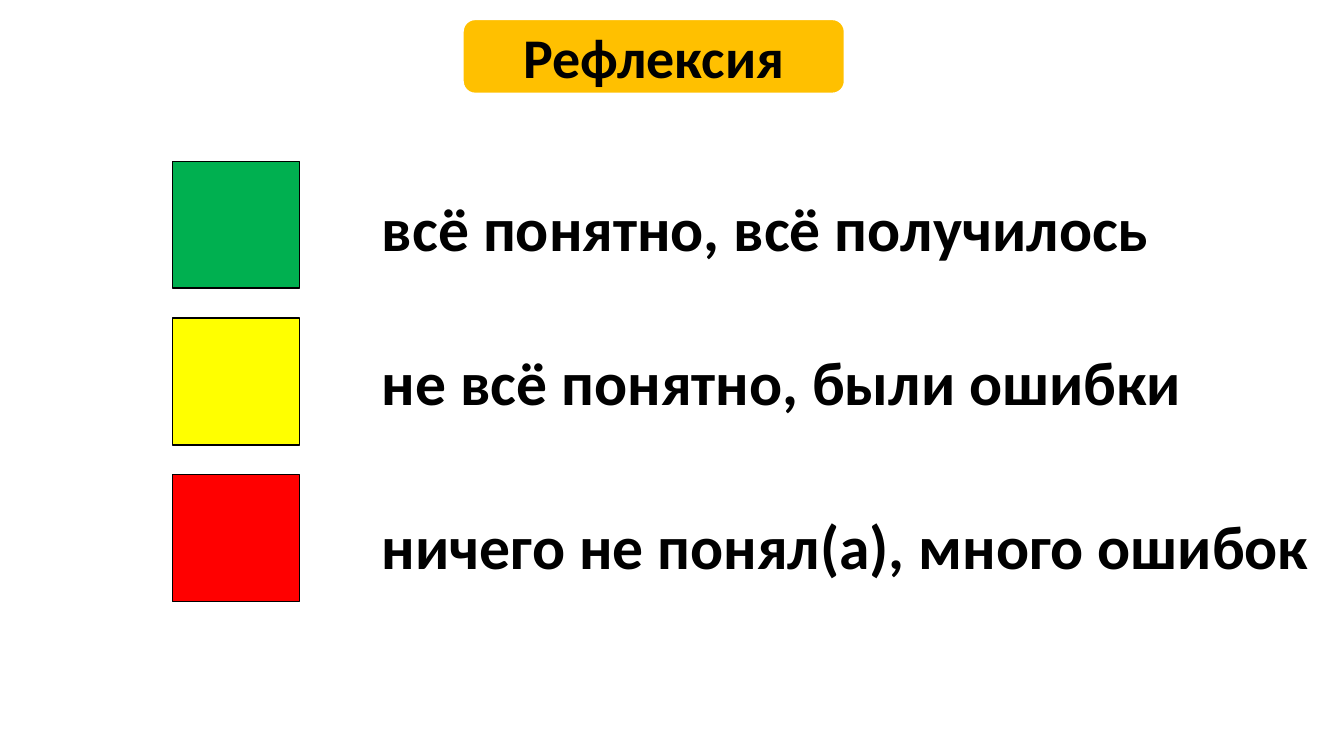
from pptx import Presentation, util as u
from pptx.dml import color
from pptx.enum import shapes, text

COLORS = {
    "text": "000000",
    "outline": "000000",
    "title_fill": "FFC000",
    "title_line": "FFFFFF",
    "green": "00B050",
    "yellow": "FFFF00",
    "red": "FF0000",
}


class ReflectionSlide:
    """Style and current slide; lengths are percentages of the slide's size."""

    font_name = "Calibri"

    def __init__(self, presentation):
        self.width = presentation.slide_width
        self.height = presentation.slide_height
        self.slide = presentation.slides.add_slide(presentation.slide_layouts[6])

    def place(self, left, top, width, height):
        return [int(share * size / 100) for share, size in
                ((left, self.width), (top, self.height),
                 (width, self.width), (height, self.height))]

    def rgb(self, name):
        return color.RGBColor.from_string(COLORS[name])

    def set_words(self, shape, words, size):
        shape.text_frame.text = words
        shape.text_frame.word_wrap = True
        paragraph = shape.text_frame.paragraphs[0]
        font = paragraph.runs[0].font
        font.name = self.font_name
        font.size = u.Pt(size)
        font.bold = True
        font.color.rgb = self.rgb("text")
        return paragraph

    def box(self, kind, area, fill, line, line_width):
        shape = self.slide.shapes.add_shape(kind, *self.place(*area))
        shape.shadow.inherit = False
        shape.fill.solid()
        shape.fill.fore_color.rgb = self.rgb(fill)
        shape.line.color.rgb = self.rgb(line)
        shape.line.width = u.Pt(line_width)
        return shape

    def title(self, words, area):
        shape = self.box(shapes.MSO_SHAPE.ROUNDED_RECTANGLE, area,
                         "title_fill", "title_line", 1.5)
        paragraph = self.set_words(shape, words, 40)
        paragraph.alignment = text.PP_ALIGN.CENTER
        shape.text_frame.vertical_anchor = text.MSO_ANCHOR.MIDDLE

    def square(self, fill, area):
        self.box(shapes.MSO_SHAPE.RECTANGLE, area, fill, "outline", 1)

    def label(self, words, area):
        shape = self.slide.shapes.add_textbox(*self.place(*area))
        self.set_words(shape, words, 44)
        shape.text_frame.auto_size = text.MSO_AUTO_SIZE.SHAPE_TO_FIT_TEXT


def main():
    presentation = Presentation()
    presentation.slide_width = u.Inches(13.33)
    presentation.slide_height = u.Inches(7.5)
    reflection = ReflectionSlide(presentation)

    # Title
    reflection.title("Рефлексия", (34.43, 2.53, 28.43, 9.87))

    # Signal squares with their meanings
    first_top, row_step = 21.33, 20.74
    answers = [
        ("green", "всё понятно, всё получилось", 24.53, 65.34),
        ("yellow", "не всё понятно, были ошибки", 44.8, 61.22),
        ("red", "ничего не понял(а), много ошибок", 66.53, 74.27),
    ]
    for row, (fill, words, label_top, label_width) in enumerate(answers):
        reflection.square(fill, (12.83, first_top + row * row_step, 9.45, 16.8))
        reflection.label(words, (27.68, label_top, label_width, 11.2))

    presentation.save("out.pptx")


if __name__ == "__main__":
    main()
